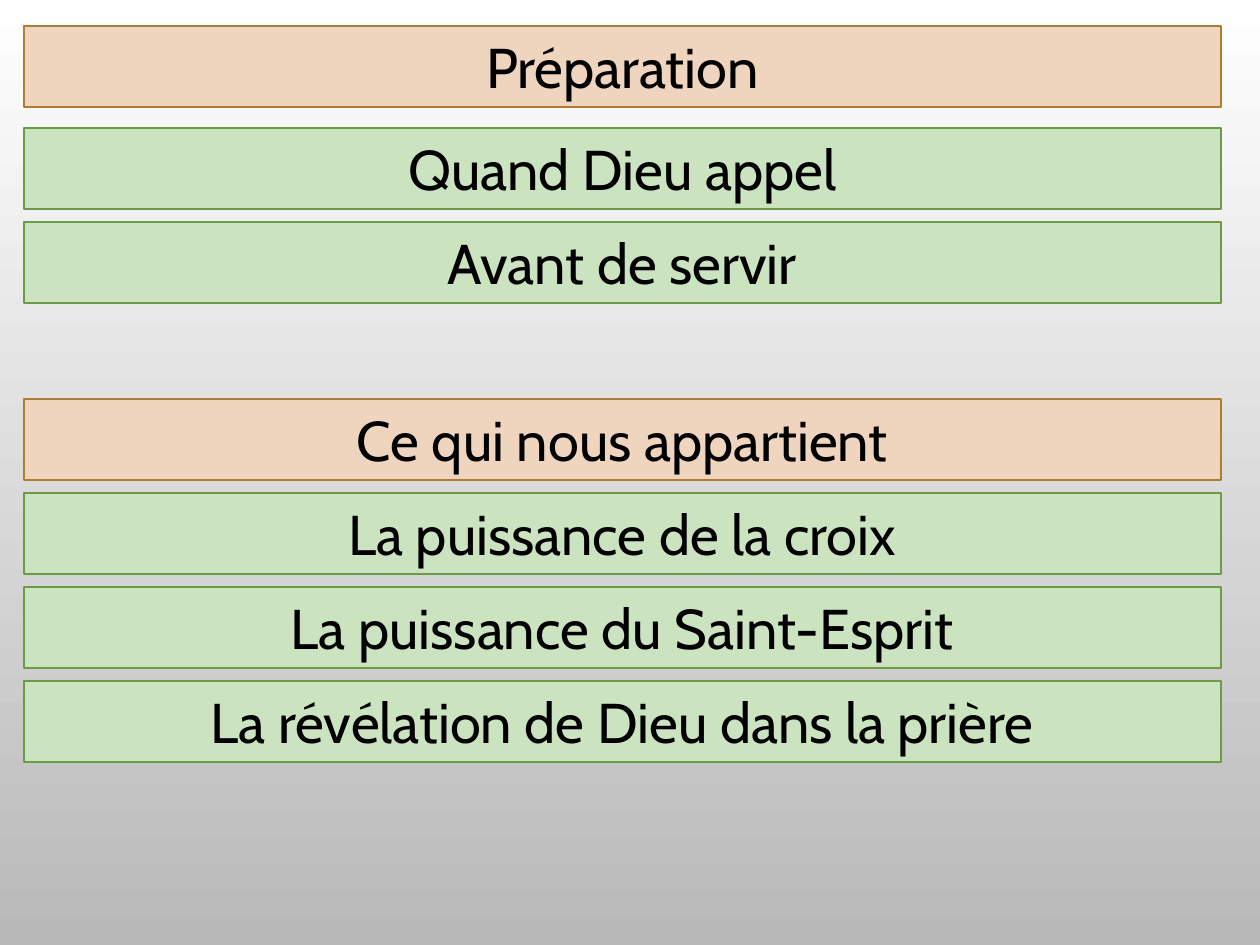
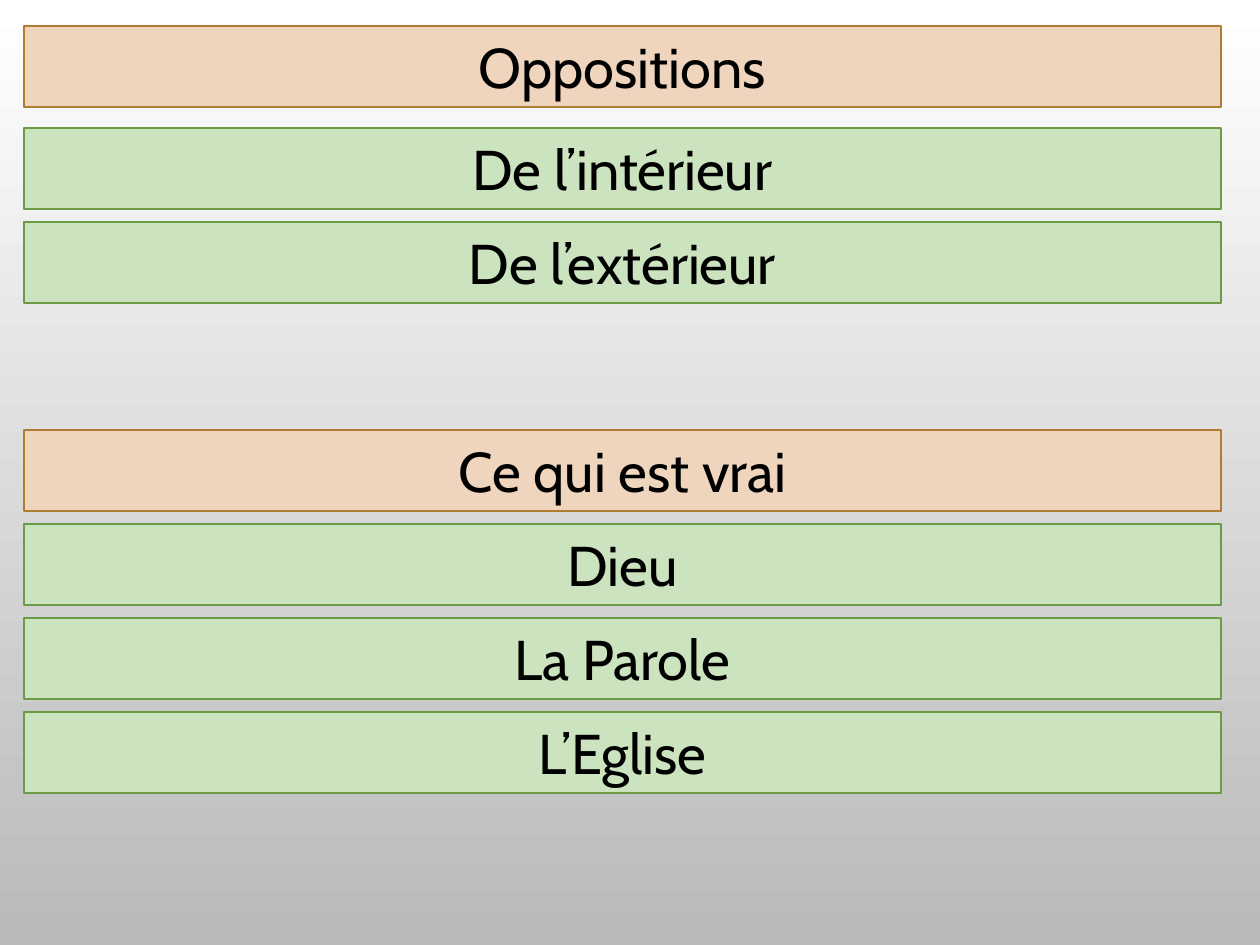
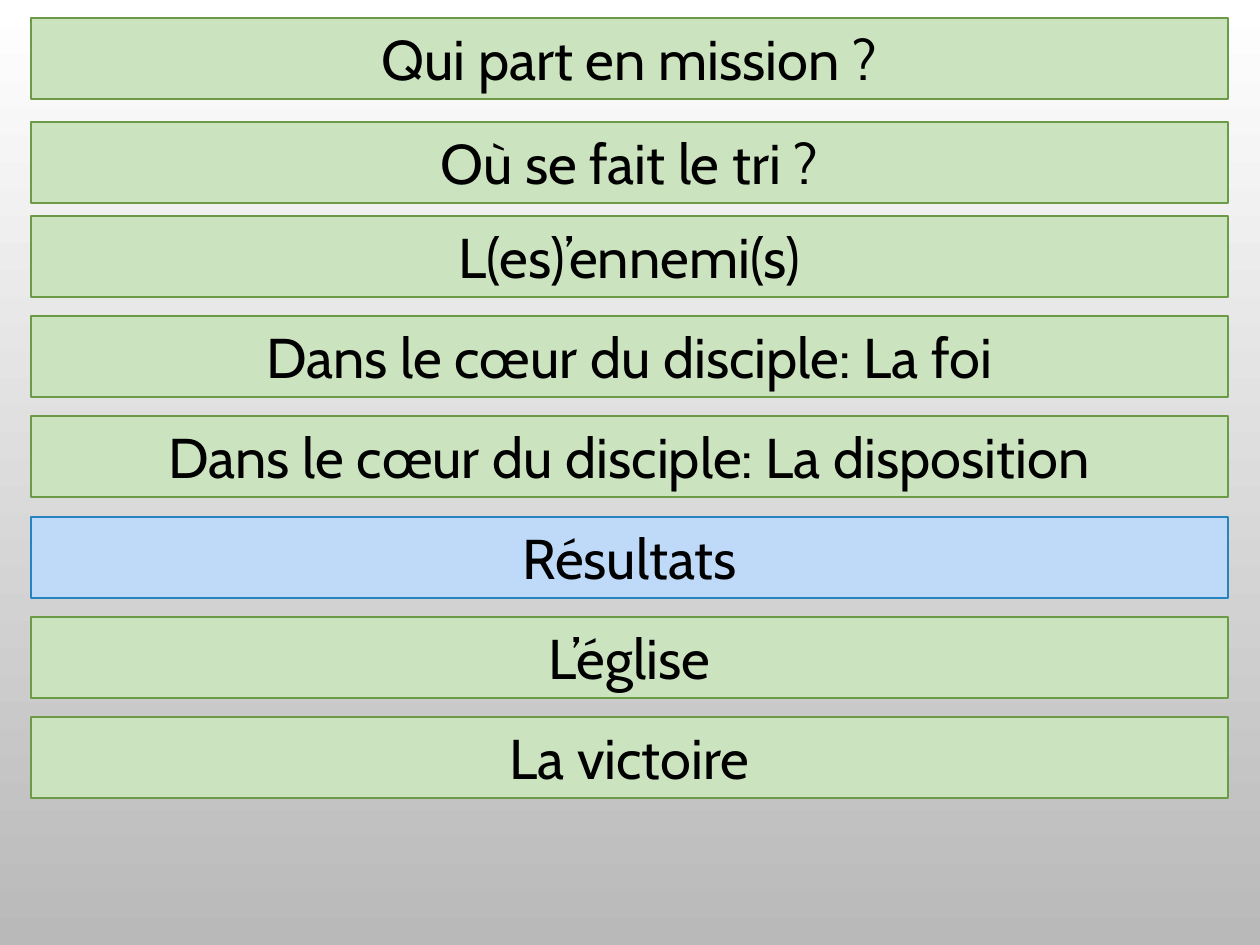
from pptx import Presentation
from pptx.dml.color import RGBColor
from pptx.enum.shapes import MSO_SHAPE as Shape
from pptx.enum.text import MSO_ANCHOR as Anchor, MSO_AUTO_SIZE as AutoSize, PP_ALIGN as Align
from pptx.util import Emu, Inches, Pt

COLORS = {
    "text": "000000",
    "sky_top": "FFFFFF",
    "sky_bottom": "B9B9B9",
    "heading_fill": "EFD5BD",
    "heading_line": "AE7D32",
    "topic_fill": "CCE3BF",
    "topic_line": "6B9B46",
    "result_fill": "BFDAF9",
    "result_line": "2683BF",
}
FONT = "Cabin"
BAND_WIDTH, BAND_HEIGHT = 1197, 81
PITCH = 94
WIDE_PITCH = 100
OUTLINE_LEFT, SUMMARY_LEFT = 24, 31


def px(length):
    """Turn pixels into EMU."""
    return Emu(round(length * Inches(1) / 126))


def color(name):
    """Look up a named colour."""
    return RGBColor.from_string(COLORS[name])


def paint_background(master):
    """Give every slide the vertical grey gradient."""
    fill = master.background.fill
    fill.gradient()
    fill.gradient_angle = 270
    for stop, name in zip(fill.gradient_stops, ("sky_top", "sky_bottom")):
        stop.color.rgb = color(name)


def add_band(page, left, top, text, kind="topic"):
    """Draw one full-width band with a centred line of text."""
    band = page.shapes.add_shape(
        Shape.RECTANGLE, px(left), px(top), px(BAND_WIDTH), px(BAND_HEIGHT))
    band.shadow.inherit = False
    band.fill.solid()
    band.fill.fore_color.rgb = color(f"{kind}_fill")
    band.line.color.rgb = color(f"{kind}_line")
    band.line.width = Pt(0.75)
    frame = band.text_frame
    frame.word_wrap = True
    frame.auto_size = AutoSize.SHAPE_TO_FIT_TEXT
    frame.vertical_anchor = Anchor.TOP
    para = frame.paragraphs[0]
    para.text = text
    para.alignment = Align.CENTER
    para.font.name = FONT
    para.font.size = Pt(32)
    para.font.color.rgb = color("text")


def add_stack(page, left, top, topics, pitch=PITCH):
    """Stack topic bands downwards at an even pitch."""
    for row, topic in enumerate(topics):
        add_band(page, left, top + row * pitch, topic)


def add_section(page, top, heading, topics, first_step=PITCH):
    """Draw a heading band with its topics below."""
    add_band(page, OUTLINE_LEFT, top, heading, "heading")
    add_stack(page, OUTLINE_LEFT, top + first_step, topics)


def build_outline(page, upper, lower, lower_top):
    """Fill a page with two headed sections."""
    add_section(page, 26, *upper, first_step=102)
    add_section(page, lower_top, *lower)


def build_summary(page):
    """Fill the page that reviews the mission and its results."""
    left = SUMMARY_LEFT
    add_band(page, left, 18, "Qui part en mission ?")
    add_band(page, left, 122, "Où se fait le tri ?")
    add_stack(page, left, 216, [
        "L(es)’ennemi(s)",
        "Dans le cœur du disciple: La foi",
        "Dans le cœur du disciple: La disposition",
    ], WIDE_PITCH)
    add_band(page, left, 517, "Résultats", "result")
    add_stack(page, left, 617, ["L’église", "La victoire"], WIDE_PITCH)


def main():
    """Build and save the deck."""
    deck = Presentation()
    deck.slide_width, deck.slide_height = Inches(10), Inches(7.5)
    paint_background(deck.slide_master)
    preparation, opposition, summary = (
        deck.slides.add_slide(deck.slide_layouts[6]) for _ in range(3))
    build_outline(
        preparation,
        ("Préparation", ["Quand Dieu appel", "Avant de servir"]),
        ("Ce qui nous appartient", [
            "La puissance de la croix",
            "La puissance du Saint-Esprit",
            "La révélation de Dieu dans la prière",
        ]),
        lower_top=399)
    build_outline(
        opposition,
        ("Oppositions", ["De l’intérieur", "De l’extérieur"]),
        ("Ce qui est vrai", ["Dieu", "La Parole", "L’Eglise"]),
        lower_top=430)
    build_summary(summary)
    deck.save("out.pptx")


if __name__ == "__main__":
    main()
